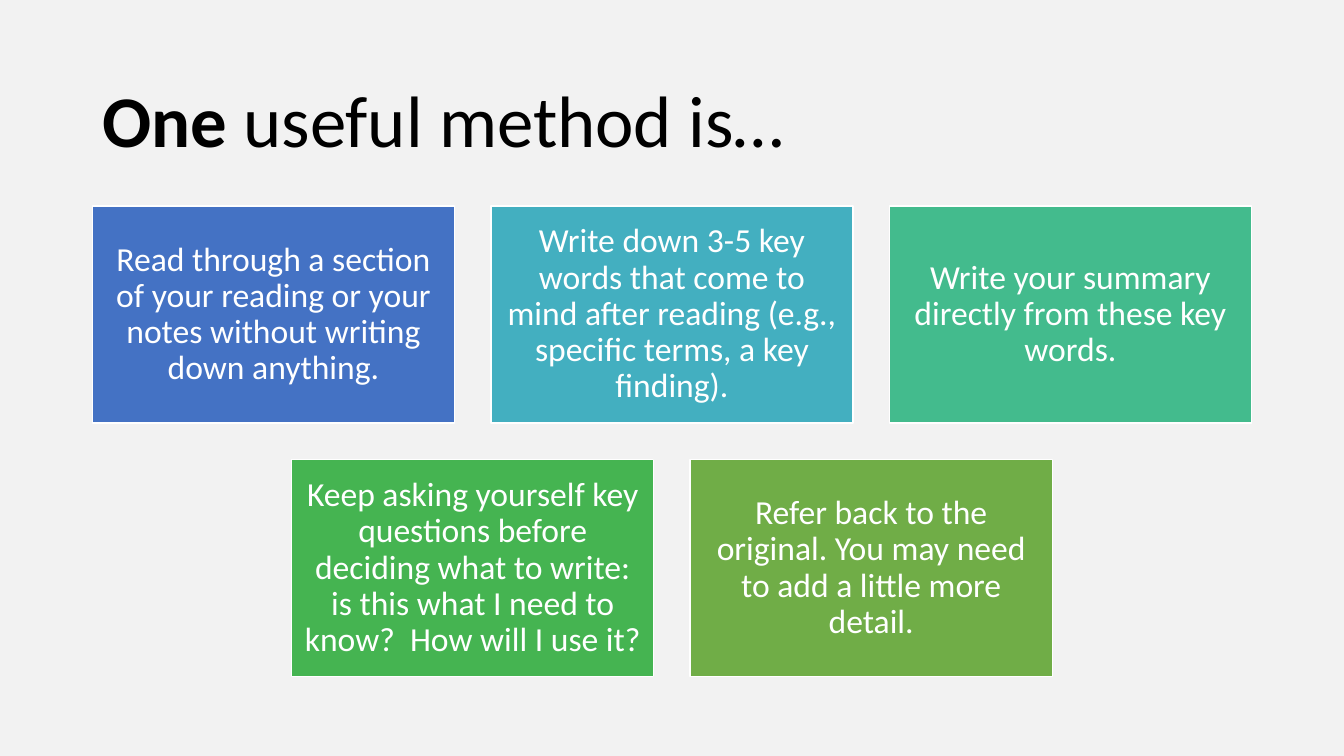
import pptx
import pptx.dml.color
import pptx.enum.shapes
import pptx.enum.text
import pptx.util

Pt = pptx.util.Pt
FONT = "Calibri"
STEPS = [
    ("4472C4", "Read through a section of your reading or your notes without writing down anything."),
    ("43AFC0", "Write down 3-5 key words that come to mind after reading (e.g., specific terms, a key finding)."),
    ("43BB8D", "Write your summary directly from these key words."),
    ("45B451", "Keep asking yourself key questions before deciding what to write: is this what I need to know?  How will I use it?"),
    ("70AD47", "Refer back to the original. You may need to add a little more detail."),
]


def paint(form, color):
    form.solid()
    form.fore_color.rgb = pptx.dml.color.RGBColor.from_string(color)


def add_run(para, text, size, color, bold=False):
    run = para.add_run()
    run.text = text
    run.font.name = FONT
    run.font.size = Pt(size)
    run.font.bold = bold
    paint(run.font.fill, color)


def set_frame(frame, side, edge):
    frame.word_wrap = True
    frame.vertical_anchor = pptx.enum.text.MSO_ANCHOR.MIDDLE
    frame.margin_left = frame.margin_right = Pt(side)
    frame.margin_top = frame.margin_bottom = Pt(edge)
    para = frame.paragraphs[0]
    para.line_spacing = 0.9
    return para


def add_title(slide, left, top, width, height):
    box = slide.shapes.add_textbox(Pt(left), Pt(top), Pt(width), Pt(height))
    para = set_frame(box.text_frame, 7.2, 3.6)
    add_run(para, "One ", 52, "000000", True)
    add_run(para, "useful method is…", 52, "000000")


def add_card(slide, left, top, width, height, color, text):
    card = slide.shapes.add_shape(
        pptx.enum.shapes.MSO_SHAPE.RECTANGLE,
        Pt(left), Pt(top), Pt(width), Pt(height))
    card.shadow.inherit = False
    paint(card.fill, color)
    paint(card.line.fill, "FFFFFF")
    card.line.width = Pt(1)
    para = set_frame(card.text_frame, 7.2, 7.2)
    para.alignment = pptx.enum.text.PP_ALIGN.CENTER
    add_run(para, text, 24, "FFFFFF")


def add_cards(slide, left, top, width, cols=3):
    wide = width / (cols + 0.1 * (cols - 1))
    high = 0.6 * wide
    gap = 0.1 * wide
    for start in range(0, len(STEPS), cols):
        row = STEPS[start:start + cols]
        inset = (cols - len(row)) * (wide + gap) / 2
        y = top + start // cols * (high + gap)
        for col, (color, text) in enumerate(row):
            x = left + inset + col * (wide + gap)
            add_card(slide, x, y, wide, high, color, text)


def main():
    deck = pptx.Presentation()
    deck.slide_width = Pt(960)
    deck.slide_height = Pt(540)
    slide = deck.slides.add_slide(deck.slide_layouts[6])
    paint(slide.background.fill, "F2F2F2")
    add_title(slide, 66, 44, 828, 89)
    add_cards(slide, 66, 147, 828)
    deck.save("out.pptx")


if __name__ == "__main__":
    main()
